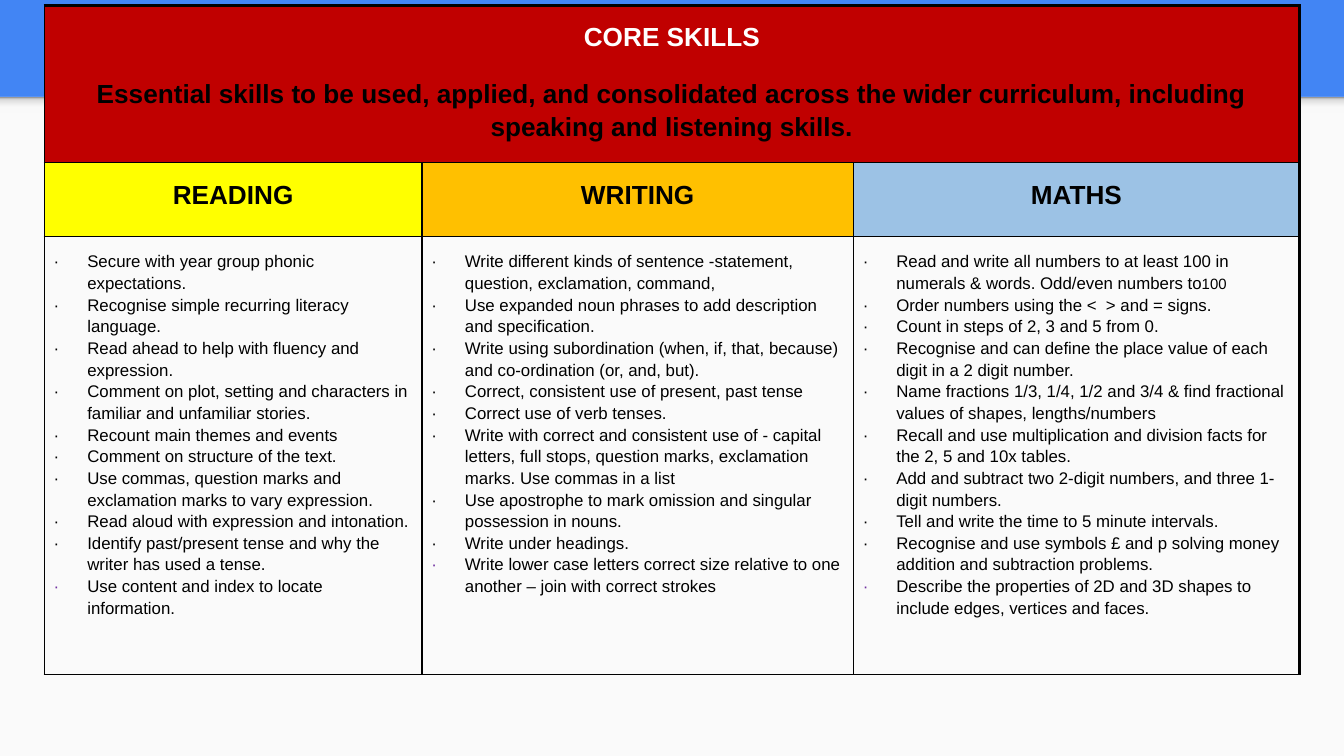
from lxml import etree
from pptx import Presentation
from pptx.dml.color import RGBColor
from pptx.enum.shapes import MSO_SHAPE as Shape
from pptx.enum.text import PP_ALIGN as Align
from pptx.oxml import parse_xml
from pptx.oxml.ns import nsdecls, qn
from pptx.util import Inches, Pt

COLORS = {
    "band": "4285F4", "page": "FAFAFA", "banner": "C00000",
    "reading": "FFFF00", "writing": "FFC000", "maths": "9CC2E5",
    "black": "000000", "white": "FFFFFF", "last_bullet": "7030A0",
}
SHADOW_STOPS = [(0, "F9F9F9"), (36, "F9F9F9"), (80, "DEDEDE"), (100, "999999")]
BANNER = [
    ("CORE SKILLS", "white"),
    ("Essential skills to be used, applied, and consolidated across the wider "
     "curriculum, including speaking and listening skills.", "black"),
]
SUBJECTS = [
    ("READING", "reading", 2.81, [
        "Secure with year group phonic expectations.",
        "Recognise simple recurring literacy language.",
        "Read ahead to help with fluency and expression.",
        "Comment on plot, setting and characters in familiar and unfamiliar stories.",
        "Recount main themes and events",
        "Comment on structure of the text.",
        "Use commas, question marks and exclamation marks to vary expression.",
        "Read aloud with expression and intonation.",
        "Identify past/present tense and why the writer has used a tense.",
        "Use content and index to locate information.",
    ]),
    ("WRITING", "writing", 3.21, [
        "Write different kinds of sentence -statement, question, exclamation, command,",
        "Use expanded noun phrases to add description and specification.",
        "Write using subordination (when, if, that, because) and co-ordination (or, and, but).",
        "Correct, consistent use of present, past tense",
        "Correct use of verb tenses.",
        "Write with correct and consistent use of - capital letters, full stops, "
        "question marks, exclamation marks. Use commas in a list",
        "Use apostrophe to mark omission and singular possession in nouns.",
        "Write under headings.",
        "Write lower case letters correct size relative to one another – join with correct strokes",
    ]),
    ("MATHS", "maths", 3.32, [
        "Read and write all numbers to at least 100 in numerals & words. Odd/even numbers to",
        "Order numbers using the <  > and = signs.",
        "Count in steps of 2, 3 and 5 from 0.",
        "Recognise and can define the place value of each digit in a 2 digit number.",
        "Name fractions 1/3, 1/4, 1/2 and 3/4 & find fractional values of shapes, lengths/numbers",
        "Recall and use multiplication and division facts for the 2, 5 and 10x tables.",
        "Add and subtract two 2-digit numbers, and three 1-digit numbers.",
        "Tell and write the time to 5 minute intervals.",
        "Recognise and use symbols £ and p solving money addition and subtraction problems.",
        "Describe the properties of 2D and 3D shapes to include edges, vertices and faces.",
    ]),
]
ROW_HEIGHTS = [1.17, 0.55, 3.26]


def rgb(name):
    return RGBColor.from_string(COLORS[name])


def style_run(run, size, color, bold=False):
    run.font.name = "Arial"
    run.font.size = Pt(size)
    run.font.bold = bold
    run.font.color.rgb = rgb(color)


def add_panel(slide, left, top, width, height):
    panel = slide.shapes.add_shape(Shape.RECTANGLE, left, top, width, height)
    panel.shadow.inherit = False
    panel.line.fill.background()
    panel.fill.solid()
    panel.fill.fore_color.rgb = rgb("page")
    return panel


def add_backdrop(slide, left, top, width, height):
    """Pale page below the blue band, with a soft shadow along its top edge."""
    slide.background.fill.solid()
    slide.background.fill.fore_color.rgb = rgb("band")
    add_panel(slide, left, top, width, height)
    edge = add_panel(slide, left, top, width, Inches(0.12))
    stops = "".join(
        f'<a:gs pos="{pos * 1000}"><a:srgbClr val="{color}"/></a:gs>'
        for pos, color in SHADOW_STOPS)
    gradient = parse_xml(
        f'<a:gradFill {nsdecls("a")} rotWithShape="1"><a:gsLst>{stops}</a:gsLst>'
        '<a:lin ang="16200000" scaled="0"/></a:gradFill>')
    properties = edge.fill._xPr
    properties.replace(properties.find(qn("a:solidFill")), gradient)


def set_borders(cell, widths):
    """Draw black borders, with widths in points keyed by side: L, R, T, B."""
    properties = cell._tc.get_or_add_tcPr()
    for position, (side, width) in enumerate(widths.items()):
        properties.insert(position, parse_xml(
            f'<a:ln{side} {nsdecls("a")} w="{Pt(width)}"><a:solidFill>'
            f'<a:srgbClr val="{COLORS["black"]}"/></a:solidFill></a:ln{side}>'))


def fill_heading(cell, lines, fill):
    cell.fill.solid()
    cell.fill.fore_color.rgb = rgb(fill)
    cell.text_frame.text = "\n".join(text for text, _ in lines)
    for index, (paragraph, (_, color)) in enumerate(zip(cell.text_frame.paragraphs, lines)):
        paragraph.alignment = Align.CENTER
        paragraph.line_spacing = 1.15
        paragraph.space_before = Pt(12 if index else 0)
        style_run(paragraph.runs[0], 14, color, bold=True)


def add_bullet(paragraph, color):
    properties = paragraph._p.get_or_add_pPr()
    properties.set("marL", str(Inches(0.25)))
    properties.set("indent", str(Inches(-0.25)))
    bullet_color = etree.SubElement(properties, qn("a:buClr"))
    etree.SubElement(bullet_color, qn("a:srgbClr"), val=COLORS[color])
    etree.SubElement(properties, qn("a:buFont"), typeface="Arial")
    etree.SubElement(properties, qn("a:buChar"), char="·")


def fill_skills(cell, skills):
    cell.fill.background()
    cell.text_frame.text = "\n".join(skills)
    paragraphs = cell.text_frame.paragraphs
    for number, paragraph in enumerate(paragraphs, 1):
        add_bullet(paragraph, "last_bullet" if number == len(paragraphs) else "black")
        paragraph.line_spacing = 1.15
        style_run(paragraph.runs[0], 9, "black")


def add_skills_table(slide, left, top, width, height):
    table = slide.shapes.add_table(
        len(ROW_HEIGHTS), len(SUBJECTS), left, top, width, height).table
    table.first_row = table.horz_banding = False
    for row, row_height in zip(table.rows, ROW_HEIGHTS):
        row.height = Inches(row_height)
    last_column = len(SUBJECTS) - 1
    for row in range(len(ROW_HEIGHTS)):
        for column in range(len(SUBJECTS)):
            cell = table.cell(row, column)
            cell.margin_left = cell.margin_right = Inches(0.07)
            cell.margin_top = cell.margin_bottom = Inches(0.1)
            right = 1.5 if row == 0 or column == last_column else 1
            set_borders(cell, {"L": 1, "R": right, "T": 1 if row else 1.5, "B": 1})

    table.cell(0, 0).merge(table.cell(0, last_column))
    fill_heading(table.cell(0, 0), BANNER, "banner")
    for column, (subject, fill, column_width, skills) in enumerate(SUBJECTS):
        table.columns[column].width = Inches(column_width)
        fill_heading(table.cell(1, column), [(subject, "black")], fill)
        fill_skills(table.cell(2, column), skills)
    number_limit = table.cell(2, last_column).text_frame.paragraphs[0].add_run()
    number_limit.text = "100"
    style_run(number_limit, 8, "black")


def main():
    deck = Presentation()
    deck.slide_width = Inches(10)
    deck.slide_height = deck.slide_width * 9 // 16
    slide = deck.slides.add_slide(deck.slide_layouts[6])
    page_top = Inches(0.72)
    add_backdrop(slide, 0, page_top, deck.slide_width, deck.slide_height - page_top)
    add_skills_table(slide, Inches(0.33), Inches(0.04), Inches(9.34), Inches(sum(ROW_HEIGHTS)))
    deck.save("out.pptx")


if __name__ == "__main__":
    main()
